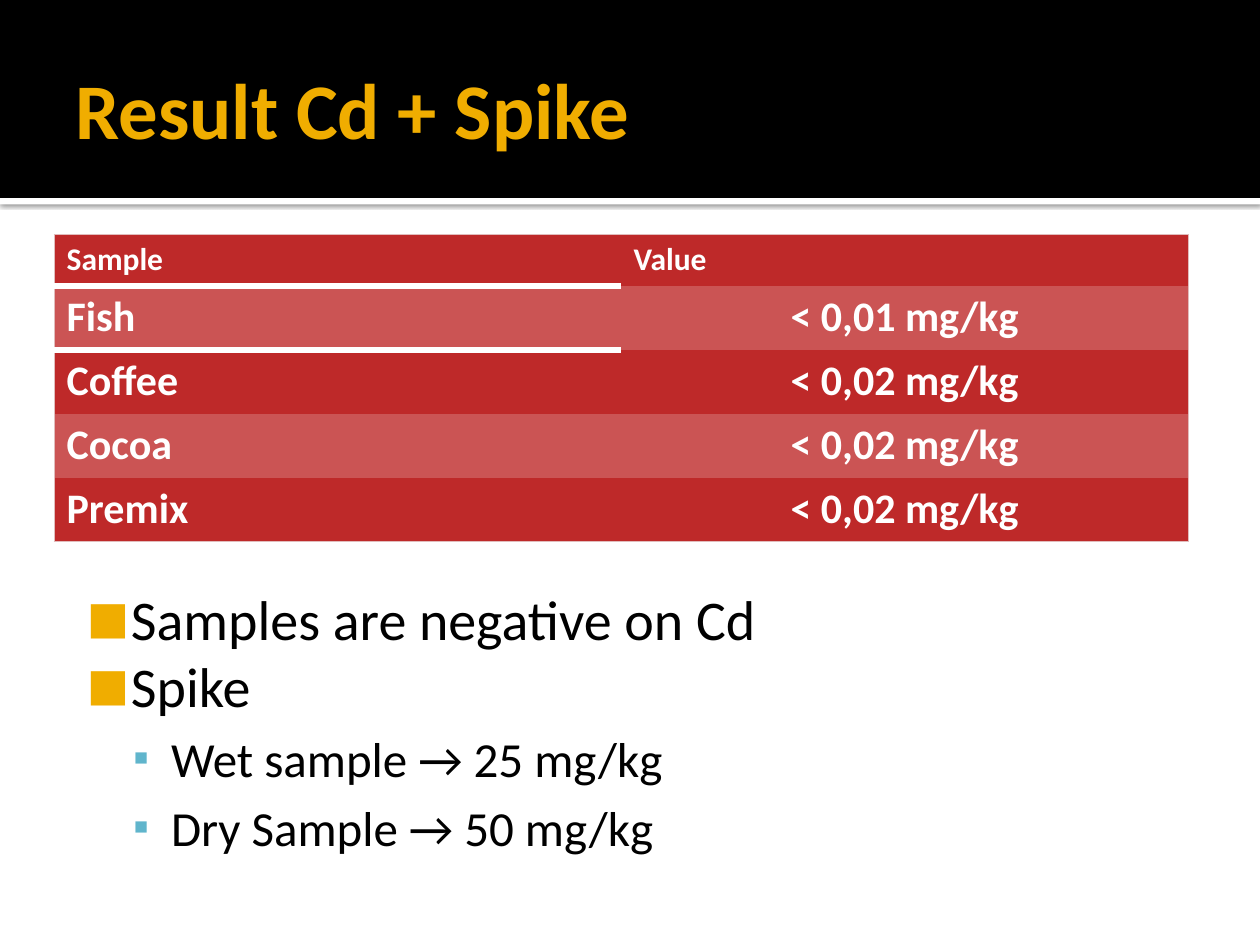
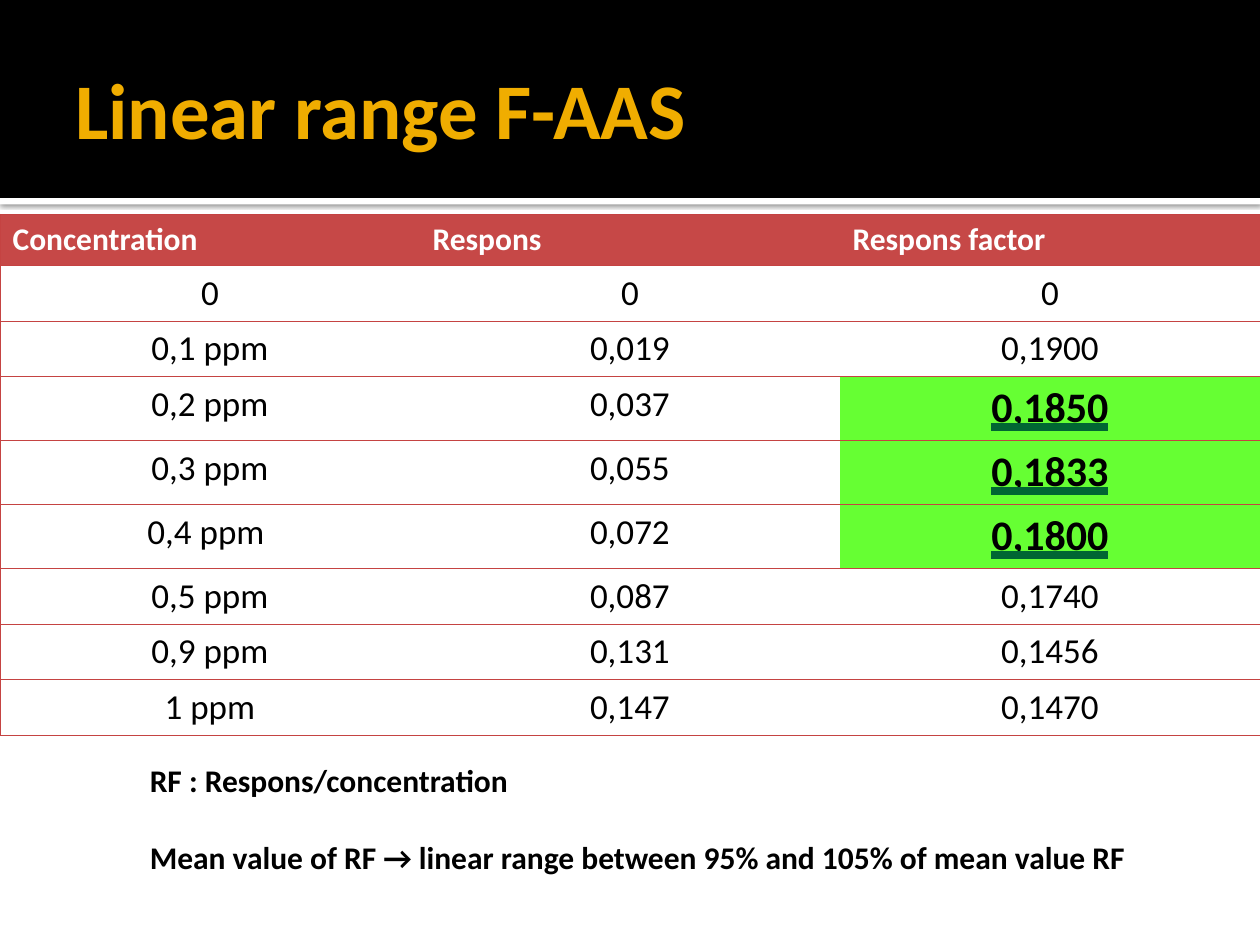
from lxml.etree import SubElement
from pptx import Presentation
from pptx.dml.color import RGBColor
from pptx.enum.shapes import MSO_SHAPE
from pptx.enum.text import MSO_ANCHOR, MSO_UNDERLINE, PP_ALIGN
from pptx.oxml.ns import qn
from pptx.util import Cm, Pt

HUES = {
    "black": "000000", "white": "FFFFFF", "gold": "F0AD00", "blue": "60B5CC",
    "red": "BE2929", "rose": "CB5454", "pink": "E1BCBC",
    "brick": "C64847", "rule": "C54342", "lime": "66FF33", "green": "006633",
}
FONT = "Calibri"
PLAIN = "{2D5ABB26-0587-4C30-8999-92F81FD0307C}"
WIDE, HIGH = 25.4, 19.05
BAND = 3.99
HEAD = (1.27, 0.43, 22.86, 3.48)

LIMITS = [
    ("Sample", "Value"),
    ("Fish", "< 0,01 mg/kg"),
    ("Coffee", "< 0,02 mg/kg"),
    ("Cocoa", "< 0,02 mg/kg"),
    ("Premix", "< 0,02 mg/kg"),
]
RANGE = [
    ("Concentration", "Respons", "Respons factor"),
    ("0", "0", "0"),
    ("0,1 ppm", "0,019", "0,1900"),
    ("0,2 ppm", "0,037", "0,1850"),
    ("0,3 ppm", "0,055", "0,1833"),
    ("0,4 ppm ", "0,072", "0,1800"),
    ("0,5 ppm", "0,087", "0,1740"),
    ("0,9 ppm", "0,131", "0,1456"),
    ("1 ppm", "0,147", "0,1470"),
]
LINEAR = range(3, 6)

TOP = {"size": 32, "left": 1.22, "hang": 0.89, "mark": ("■", "gold", 80)}
SUB = {"size": 28, "left": 2.03, "hang": 0.76, "mark": ("▪", "blue", 90), "gap": 5.6}
NOTE = {"size": 18, "left": 2.49, "hang": 0.89, "bold": True}


def color(name):
    return RGBColor.from_string(HUES[name])


def tint(parent, name):
    fill = SubElement(parent, qn("a:solidFill"))
    return SubElement(fill, qn("a:srgbClr"), val=HUES[name])


def style(para, size, hue, bold=False):
    for run in para.runs:
        run.font.name = FONT
        run.font.size = Pt(size)
        run.font.bold = bold
        run.font.color.rgb = color(hue)


def strip(slide, top, tall, hue, depth):
    bar = slide.shapes.add_shape(MSO_SHAPE.RECTANGLE, 0, Cm(top), Cm(WIDE), Cm(tall))
    bar.shadow.inherit = False
    bar.fill.solid()
    bar.fill.fore_color.rgb = color(hue)
    bar.line.fill.background()
    slide.shapes.element.insert(depth, bar.element)
    return bar


def shade(shape):
    effect = shape.element.spPr.find(qn("a:effectLst"))
    outer = SubElement(effect, qn("a:outerShdw"), blurRad=str(Pt(2.5)),
                       dist=str(Pt(0.8)), dir="5400000", algn="tl", rotWithShape="0")
    tone = SubElement(outer, qn("a:srgbClr"), val=HUES["black"])
    SubElement(tone, qn("a:alpha"), val="60000")


def start(deck, text):
    slide = deck.slides.add_slide(deck.slide_layouts[5])
    shade(strip(slide, BAND, 0.13, "white", 2))
    strip(slide, 0, BAND, "black", 3)
    title = slide.shapes.title
    title.left, title.top, title.width, title.height = map(Cm, HEAD)
    frame = title.text_frame
    frame.text = text
    frame.vertical_anchor = MSO_ANCHOR.MIDDLE
    frame.margin_left = Cm(0.25)
    frame.margin_right = frame.margin_top = frame.margin_bottom = Cm(0.13)
    frame.paragraphs[0].alignment = PP_ALIGN.LEFT
    style(frame.paragraphs[0], 45, "gold", True)
    return slide


def bullet(para, mark):
    sign, hue, scale = mark
    props = para._p.get_or_add_pPr()
    SubElement(SubElement(props, qn("a:buClr")), qn("a:srgbClr"), val=HUES[hue])
    SubElement(props, qn("a:buSzPct"), val=str(scale * 1000))
    SubElement(props, qn("a:buFont"), typeface=FONT)
    SubElement(props, qn("a:buChar"), char=sign)


def write(slide, box, lines):
    frame = slide.shapes.add_textbox(*map(Cm, box)).text_frame
    frame.word_wrap = True
    frame.margin_left, frame.margin_top = Cm(0.15), Cm(0.25)
    frame.margin_right, frame.margin_bottom = Cm(0.25), Cm(0.13)
    frame.text = "\n".join(text for text, look in lines)
    for para, (text, look) in zip(frame.paragraphs, lines):
        style(para, look["size"], "black", look.get("bold", False))
        para.space_before = Pt(look.get("gap", 0))
        props = para._p.get_or_add_pPr()
        props.set("marL", str(Cm(look["left"])))
        props.set("indent", str(-Cm(look["hang"])))
        if "mark" in look:
            bullet(para, look["mark"])


def edge(cell, sides, hue, width=0.5):
    props = cell._tc.get_or_add_tcPr()
    for side in sides:
        line = SubElement(props, qn("a:ln" + side), w=str(Pt(width)))
        tint(line, hue)


def put(cell, text, size, hue, bold, center):
    cell.text = text
    para = cell.text_frame.paragraphs[0]
    para.alignment = PP_ALIGN.CENTER if center else PP_ALIGN.LEFT
    style(para, size, hue, bold)


def paint(cell, hue):
    cell.fill.solid()
    cell.fill.fore_color.rgb = color(hue)


def grid(slide, box, data, tall):
    left, top, width = box
    count = len(data[0])
    frame = slide.shapes.add_table(len(data), count, Cm(left), Cm(top),
                                   Cm(width), Cm(sum(tall)))
    for tag in frame.element.iter(qn("a:tableStyleId")):
        tag.text = PLAIN
    table = frame.table
    for col in table.columns:
        col.width = Cm(width / count)
    for row, size in zip(table.rows, tall):
        row.height = Cm(size)
    return table


def limits(slide, box):
    table = grid(slide, box, LIMITS, [1.03] + [1.29] * 4)
    last = len(LIMITS) - 1
    for i, line in enumerate(LIMITS):
        for j, text in enumerate(line):
            cell = table.cell(i, j)
            put(cell, text, 24 if i else 18, "white", True, i and j)
            edge(cell, "R" if j else "L", "pink")
            if i == 0:
                edge(cell, "T", "pink")
            if (i, j) == (0, 0):
                edge(cell, "B", "white", 3.82)
            if (i, j) == (1, 0):
                edge(cell, "T", "white", 3.82)
            if i == last:
                edge(cell, "B", "pink")
            paint(cell, "rose" if i % 2 else "red")


def stress(cell):
    run = cell.text_frame.paragraphs[0].runs[0]
    run.font.underline = MSO_UNDERLINE.HEAVY_LINE
    props = run.font._element
    line = SubElement(props, qn("a:uFill"))
    tint(line, "green")
    props.find(qn("a:latin")).addprevious(line)


def factors(slide, box):
    tall = [1.03] + [1.29 if i in LINEAR else 1.12 for i in range(1, len(RANGE))]
    table = grid(slide, box, RANGE, tall)
    for i, line in enumerate(RANGE):
        for j, text in enumerate(line):
            cell = table.cell(i, j)
            key = j == 2 and i in LINEAR
            size = 24 if key else 20 if i else 18
            put(cell, text, size, "black" if i else "white", key or i == 0, i)
            edge(cell, {0: "LTB", 1: "TB", 2: "RTB"}[j], "rule")
            if key:
                stress(cell)
                paint(cell, "lime")
            elif i == 0:
                paint(cell, "brick")


def main():
    deck = Presentation()
    deck.slide_width, deck.slide_height = Cm(WIDE), Cm(HIGH)

    spike = start(deck, "Result Cd + Spike")
    write(spike, (1.27, 11.53, 22.86, 6.25), [
        ("Samples are negative on Cd", TOP),
        ("Spike", TOP),
        ("Wet sample → 25 mg/kg", SUB),
        ("Dry Sample → 50 mg/kg", SUB),
    ])
    limits(spike, (1.09, 4.73, 22.86))

    linear = start(deck, "Linear range F-AAS")
    factors(linear, (0, 4.32, WIDE))
    write(linear, (1.27, 15.1, 22.86, 3.9), [
        ("RF : Respons/concentration", NOTE),
        ("Mean value of RF → linear range between 95% and 105% of mean value RF",
         {**NOTE, "gap": 22}),
    ])
    deck.save("out.pptx")


if __name__ == "__main__":
    main()
